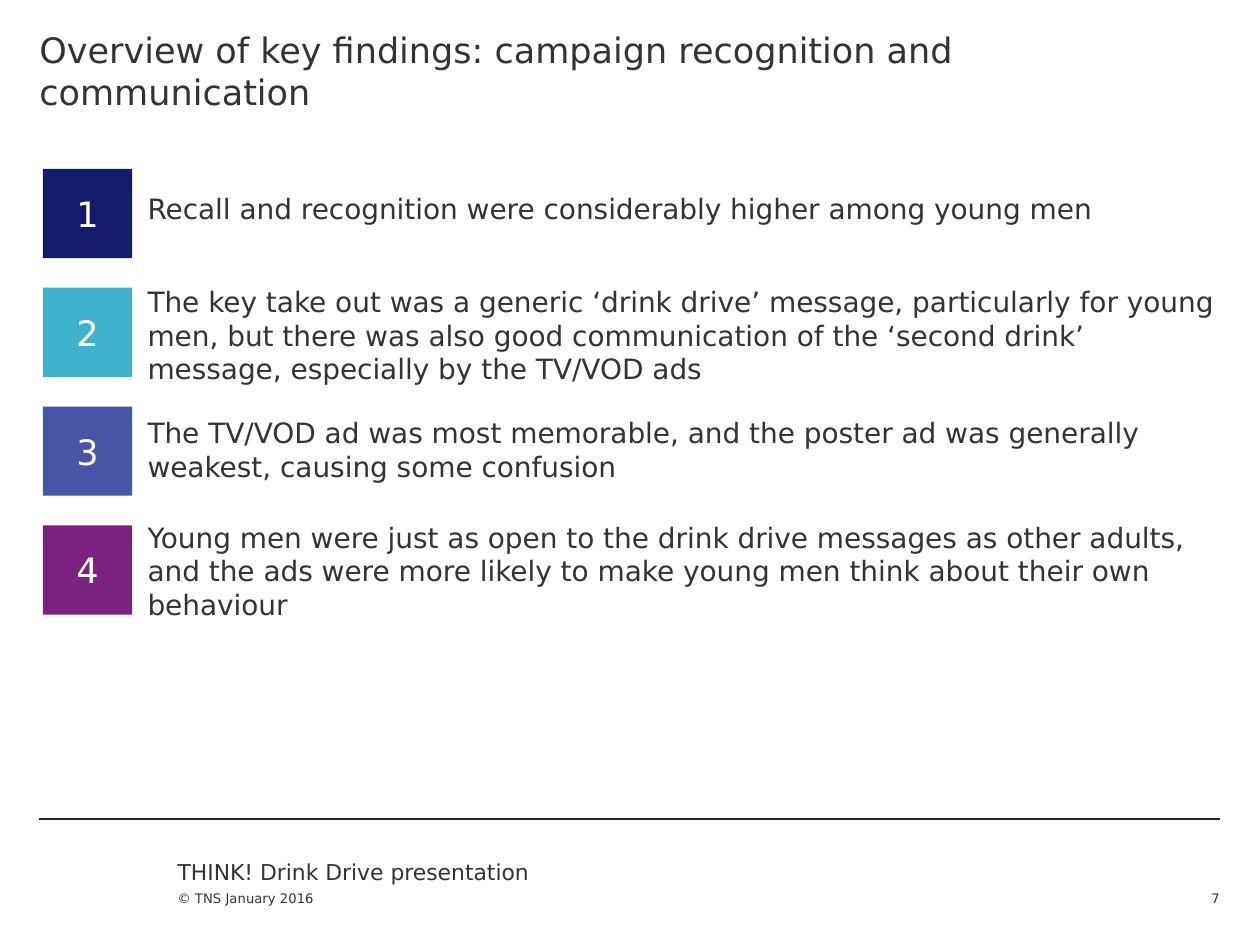
from pptx import Presentation
from pptx.dml.color import RGBColor
from pptx.enum.shapes import MSO_CONNECTOR, MSO_SHAPE
from pptx.enum.text import MSO_ANCHOR, MSO_AUTO_SIZE, PP_ALIGN
from pptx.util import Pt
from lxml import etree

FONT = "DejaVu Sans"
INK = "333333"


def rgb(color):
    return RGBColor.from_string(color)


def write(sp, text, size, color=INK, align=PP_ALIGN.LEFT,
          anchor=MSO_ANCHOR.TOP, top=0, bottom=0):
    tf = sp.text_frame
    tf.text = text
    tf.word_wrap = True
    tf.auto_size = MSO_AUTO_SIZE.NONE
    tf.vertical_anchor = anchor
    tf.margin_left = tf.margin_right = 0
    tf.margin_top, tf.margin_bottom = Pt(top), Pt(bottom)
    p = tf.paragraphs[0]
    p.alignment = align
    font = p.runs[0].font
    font.name, font.size = FONT, Pt(size)
    font.color.rgb = rgb(color)


prs = Presentation()
prs.slide_width, prs.slide_height = Pt(720), Pt(540)
s = prs.slides.add_slide(prs.slide_layouts[5])

# Title
title = s.shapes.title
title.left, title.top, title.width, title.height = Pt(22.5), Pt(0), Pt(674.5), Pt(81)
write(title, "Overview of key findings: campaign recognition and communication",
      20, top=16.5)

# Numbered findings: square colour, top of the text, text
findings = [
    ("131C6B", 93, "Recall and recognition were considerably higher among young men"),
    ("3EB1CC", 146.2, "The key take out was a generic ‘drink drive’ message, particularly "
     "for young men, but there was also good communication of the ‘second drink’ "
     "message, especially by the TV/VOD ads"),
    ("4655A5", 221, "The TV/VOD ad was most memorable, and the poster ad was generally "
     "weakest, causing some confusion"),
    ("7A2280", 280.8, "Young men were just as open to the drink drive messages as other "
     "adults, and the ads were more likely to make young men think about their own "
     "behaviour"),
]
for i, (color, top, text) in enumerate(findings):
    square = s.shapes.add_shape(MSO_SHAPE.RECTANGLE, Pt(24.5), Pt(96.5 + 67.9 * i),
                                Pt(51), Pt(51))
    square.shadow.inherit = False
    square.fill.solid()
    square.fill.fore_color.rgb = rgb(color)
    square.line.fill.background()
    write(square, str(i + 1), 20, "FFFFFF", PP_ALIGN.CENTER, MSO_ANCHOR.MIDDLE)
    box = s.shapes.add_textbox(Pt(84.3), Pt(top), Pt(612.7), Pt(58.5))
    write(box, text, 16, top=16.5)

# Footer rule
rule = s.shapes.add_connector(MSO_CONNECTOR.STRAIGHT, Pt(22.5), Pt(468), Pt(697), Pt(468))
rule.line.color.rgb = rgb("262626")
rule.line.width = Pt(0.75)
etree.SubElement(rule.line._ln.getparent(),
                 "{http://schemas.openxmlformats.org/drawingml/2006/main}effectLst")

# Footer texts and slide number
box = s.shapes.add_textbox(Pt(101.5), Pt(490.5), Pt(238.5), Pt(15))
write(box, "THINK! Drink Drive presentation", 12.5)
box = s.shapes.add_textbox(Pt(101.5), Pt(498), Pt(200), Pt(42))
write(box, "© TNS January 2016", 7.5, anchor=MSO_ANCHOR.BOTTOM, bottom=22.3)
box = s.shapes.add_textbox(Pt(657.5), Pt(498), Pt(39.5), Pt(20))
write(box, "7", 7.5, align=PP_ALIGN.RIGHT, anchor=MSO_ANCHOR.BOTTOM)

prs.save("out.pptx")
